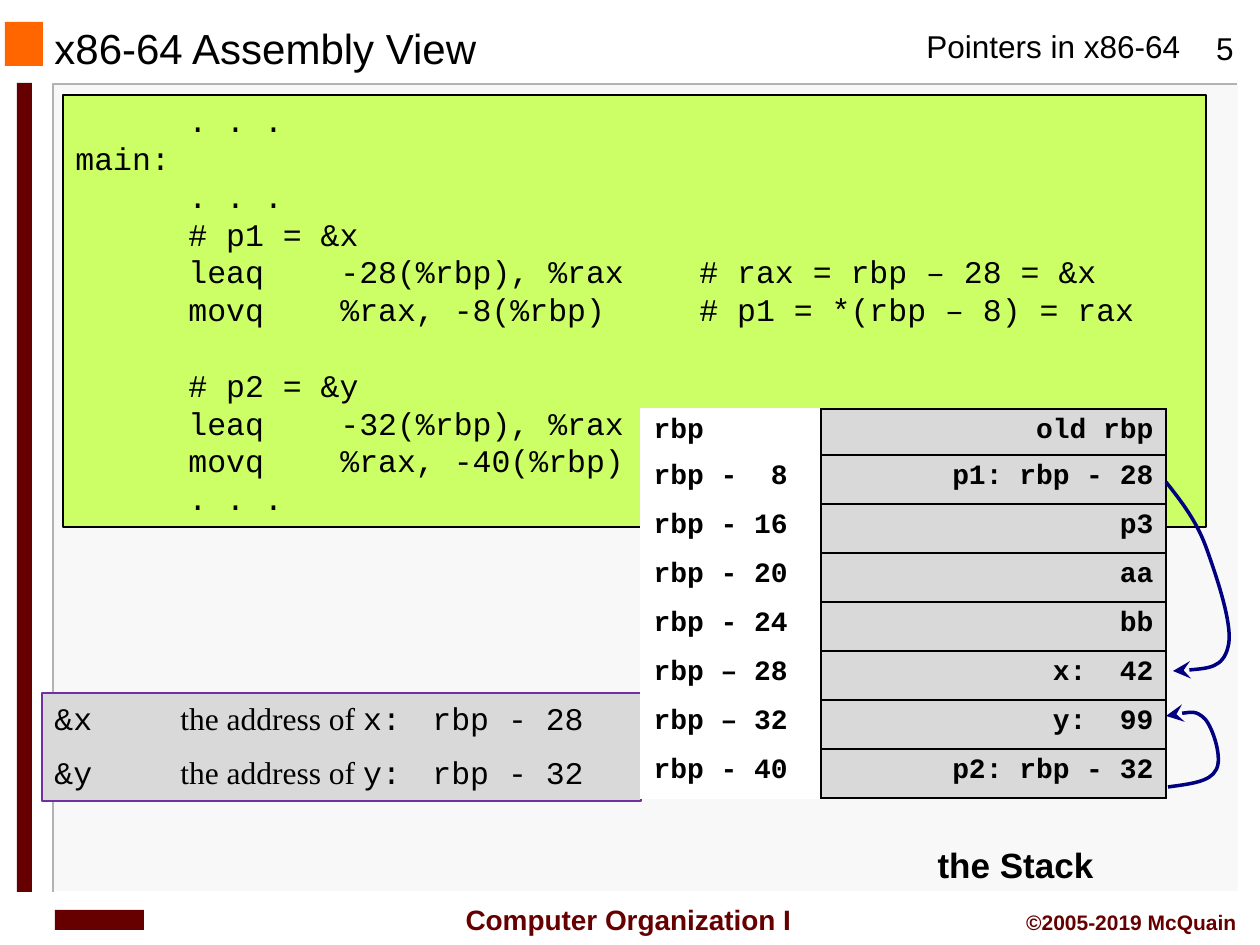
from dataclasses import dataclass

from lxml.etree import SubElement
from pptx import Presentation
from pptx.dml.color import RGBColor
from pptx.enum.shapes import MSO_SHAPE
from pptx.enum.text import MSO_ANCHOR, PP_ALIGN
from pptx.oxml.ns import qn
from pptx.util import Emu, Pt


@dataclass(frozen=True)
class Theme:
    ink: str = "000000"
    white: str = "FFFFFF"
    panel: str = "F8F8F8"
    rule: str = "B2B2B2"
    orange: str = "FF6600"
    maroon: str = "660000"
    code: str = "CCFF66"
    cell: str = "D9D9D9"
    purple: str = "7030A0"
    navy: str = "000080"
    sans: str = "Arial"
    mono: str = "Courier New"
    serif: str = "Times New Roman"
    title: int = 24
    stack: int = 20
    body: int = 18
    small: int = 16
    credit: int = 12


T = Theme()


def px(length):
    return Emu(round(length * 914400 / 126))


def rgb(color):
    return RGBColor.from_string(color)


def add_run(paragraph, text, size, font=T.sans, color=T.ink, bold=False):
    run = paragraph.add_run()
    run.text = text
    run.font.size, run.font.name, run.font.bold = Pt(size), font, bold
    run.font.color.rgb = rgb(color)


def set_tabs(paragraph, stops):
    tab_list = SubElement(paragraph._p.get_or_add_pPr(), qn("a:tabLst"))
    for stop in stops:
        SubElement(tab_list, qn("a:tab"), pos=str(px(stop)), algn="l")


def add_label(slide, box, text, size, color=T.ink, bold=False, align=PP_ALIGN.LEFT,
              wrap=True, anchor=MSO_ANCHOR.TOP):
    frame = slide.shapes.add_textbox(*map(px, box)).text_frame
    frame.word_wrap, frame.vertical_anchor = wrap, anchor
    line = frame.paragraphs[0]
    line.alignment = align
    add_run(line, text, size, color=color, bold=bold)


def add_panel(slide, box, fill, outline=None):
    panel = slide.shapes.add_shape(MSO_SHAPE.RECTANGLE, *map(px, box))
    panel.shadow.inherit = False
    panel.fill.solid()
    panel.fill.fore_color.rgb = rgb(fill)
    if outline:
        panel.line.color.rgb = rgb(outline)
        panel.line.width = Pt(0.75)
    else:
        panel.line.fill.background()
    panel.text_frame.word_wrap = True
    panel.text_frame.vertical_anchor = MSO_ANCHOR.TOP
    return panel.text_frame


def add_path(slide, box, points, color, width):
    """Draw an open outline through points given relative to the box."""
    left, top = box[:2]
    corners = [(px(left + x), px(top + y)) for x, y in points]
    builder = slide.shapes.build_freeform(*corners[0])
    builder.add_line_segments(corners[1:], close=False)
    path = builder.convert_to_shape()
    path.shadow.inherit = False
    path.fill.background()
    path.line.color.rgb = rgb(color)
    path.line.width = Pt(width)
    return path


def add_pointer(slide, box, points):
    """Turn each three points after the first into one Bezier curve."""
    pointer = add_path(slide, box, points, T.navy, 2)
    outline = pointer._element.find(".//" + qn("a:path"))
    segments = outline.findall(qn("a:lnTo"))
    for start in range(0, len(segments), 3):
        curve = SubElement(outline, qn("a:cubicBezTo"))
        for segment in segments[start:start + 3]:
            curve.append(segment[0])
            outline.remove(segment)
    SubElement(pointer.line._get_or_add_ln(), qn("a:tailEnd"),
               type="stealth", w="lg", len="lg")


def add_frame(slide, box):
    left, top, width, height = box
    # Body panel with its bevelled edges
    add_panel(slide, (left + 1, top, width, height), T.panel)
    add_path(slide, box, [(width, 0), (0, 0), (0, height)], T.rule, 1)
    add_path(slide, box, [(width + 2, 0), (width + 2, height), (2, height)], T.white, 1)
    # Orange square and maroon bar
    add_panel(slide, (left - 48, top - 62, 38, 44), T.orange)
    add_panel(slide, (left - 36, top - 1, 15, 809), T.maroon)


def add_header(slide, box):
    left, top = box[:2]
    add_label(slide, (left + 872, top, 282, 50), "Pointers in x86-64",
              T.body, wrap=False)
    add_label(slide, (left + 1141, top + 2, 84, 50), "5",
              T.body, align=PP_ALIGN.CENTER)
    add_label(slide, (left, top + 3, 798, 48), "x86-64 Assembly View",
              T.title, anchor=MSO_ANCHOR.MIDDLE)


def add_footer(slide, box):
    left, top = box[:2]
    # Plain block for the department mark
    add_panel(slide, (left + 13, top + 14, 89, 20), T.maroon)
    # Course and copyright
    add_label(slide, (left + 403, top, 367, 46), "Computer Organization I",
              T.small, T.maroon, True, PP_ALIGN.CENTER, False, MSO_ANCHOR.MIDDLE)
    add_label(slide, (left + 945, top + 7, 262, 38), "©2005-2019 McQuain",
              T.credit, T.maroon, True, PP_ALIGN.RIGHT)


def add_code(slide, box, lines):
    listing = add_panel(slide, box, T.code, T.ink)
    for number, (text, gap) in enumerate(lines):
        line = listing.paragraphs[0] if number == 0 else listing.add_paragraph()
        line.alignment = PP_ALIGN.LEFT
        line.line_spacing = Pt(21.6)
        line.space_before = Pt(gap)
        set_tabs(line, (113, 265, 624))
        add_run(line, text, T.body, T.mono)


def add_addresses(slide, box, variables):
    legend = add_panel(slide, box, T.cell, T.purple)
    for number, (name, address) in enumerate(variables):
        line = legend.paragraphs[0] if number == 0 else legend.add_paragraph()
        line.alignment = PP_ALIGN.LEFT
        line.space_before = Pt(9)
        set_tabs(line, (126, 378))
        add_run(line, f"&{name}", T.body, T.mono)
        add_run(line, "\tthe address of ", T.body, T.serif)
        add_run(line, f"{name}:\t{address}", T.body, T.mono)


def add_borders(cell, sides):
    properties = cell._tc.get_or_add_tcPr()
    for position, side in enumerate(sides):
        border = properties.makeelement(qn(f"a:ln{side}"), {"w": str(Pt(1))})
        fill = SubElement(border, qn("a:solidFill"))
        SubElement(fill, qn("a:srgbClr"), val=T.ink)
        properties.insert(position, border)


def add_stack(slide, box, slots):
    left, top, width, height = box
    stack = slide.shapes.add_table(len(slots), 2, *map(px, box)).table
    stack.first_row = stack.horz_banding = False
    stack.columns[0].width, stack.columns[1].width = px(180), px(width - 180)
    styles = ((T.white, PP_ALIGN.LEFT, "R"), (T.cell, PP_ALIGN.RIGHT, "LRTB"))
    for number, slot in enumerate(slots):
        stack.rows[number].height = px(49 if number else 46)
        for column, (fill, align, sides) in enumerate(styles):
            cell = stack.cell(number, column)
            cell.fill.solid()
            cell.fill.fore_color.rgb = rgb(fill)
            add_borders(cell, sides)
            line = cell.text_frame.paragraphs[0]
            line.alignment = align
            add_run(line, slot[column], T.small, T.mono, bold=True)
    # Pointers from p1 to x and from p2 to y
    add_pointer(slide, (left + width, top + 73, 63, 189),
                [(0, 0), (15, 19), (30, 38), (40, 65), (50, 93), (68, 145), (62, 165),
                 (57, 186), (32, 188), (7, 189)])
    add_pointer(slide, (left + width, top + 304, 53, 74),
                [(2, 74), (24, 71), (44, 69), (50, 57), (57, 46), (47, 15), (39, 6),
                 (30, -3), (15, 0), (0, 3)])
    add_label(slide, (left + 251, top + height + 39, 247, 55), "the Stack",
              T.stack, bold=True, align=PP_ALIGN.CENTER)


CODE = [("\t. . .", 0), ("main:", 0), ("\t. . .", 0), ("\t# p1 = &x", 0),
        ("\tleaq\t-28(%rbp), %rax\t# rax = rbp – 28 = &x", 0),
        ("\tmovq\t%rax, -8(%rbp)\t# p1 = *(rbp – 8) = rax", 0),
        ("\t# p2 = &y", 21.6), ("\tleaq\t-32(%rbp), %rax", 0),
        ("\tmovq\t%rax, -40(%rbp)", 0), ("\t. . .", 0)]
SLOTS = [("rbp", "old rbp"), ("rbp -  8", "p1: rbp - 28"), ("rbp - 16", "p3"),
         ("rbp - 20", "aa"), ("rbp - 24", "bb"), ("rbp – 28", "x:  42"),
         ("rbp – 32", "y:  99"), ("rbp - 40", "p2: rbp - 32")]


def main():
    deck = Presentation()
    deck.slide_width, deck.slide_height = px(1260), px(945)
    slide = deck.slides.add_slide(deck.slide_layouts[6])
    add_frame(slide, (53, 84, 1184, 808))
    add_header(slide, (42, 21, 1225, 52))
    add_footer(slide, (42, 896, 1207, 46))
    add_code(slide, (63, 95, 1143, 432), CODE)
    add_addresses(slide, (42, 693, 599, 108), [("x", "rbp - 28"), ("y", "rbp - 32")])
    add_stack(slide, (641, 409, 525, 389), SLOTS)
    deck.save("out.pptx")


if __name__ == "__main__":
    main()
